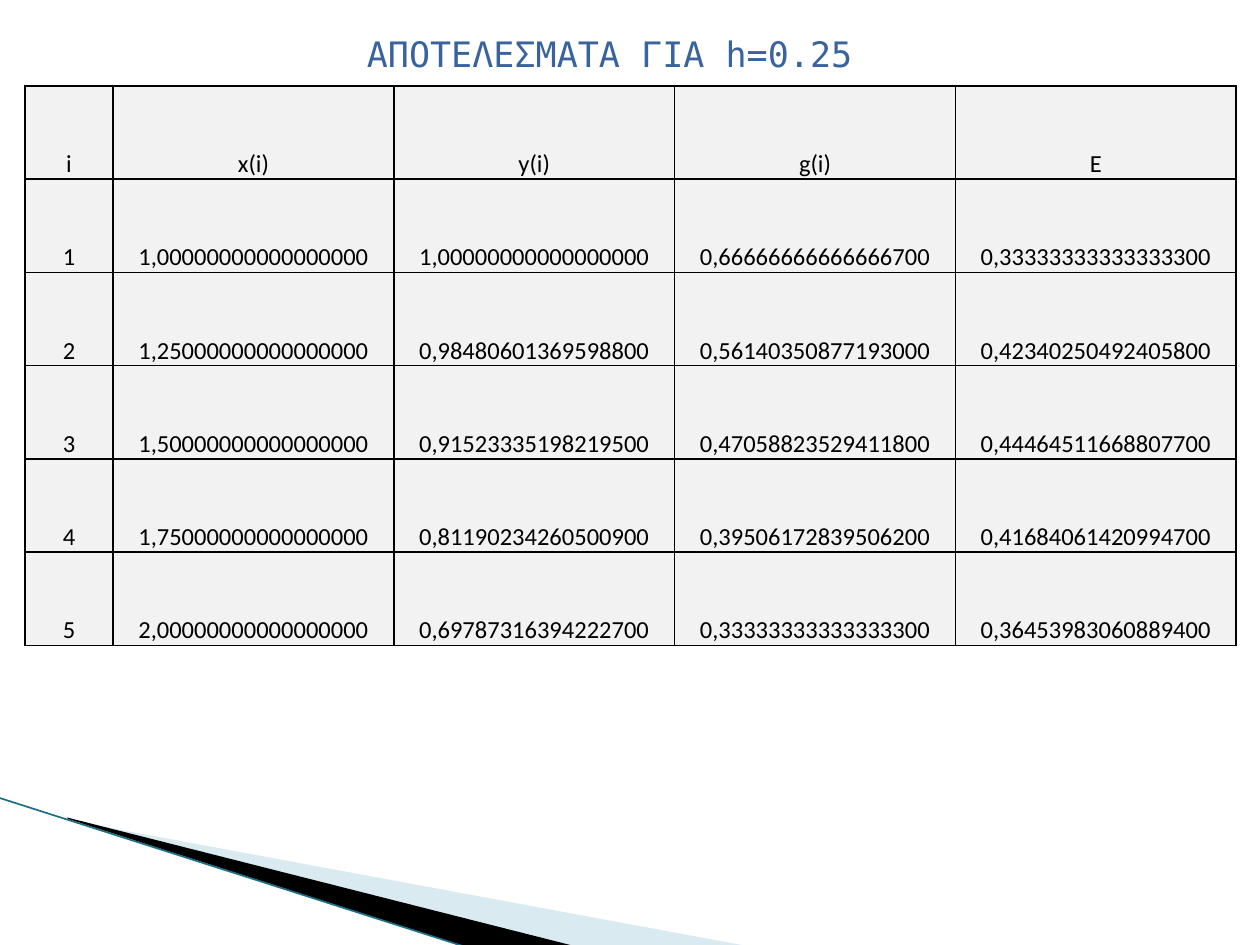
from lxml import etree
from pptx import Presentation
from pptx import util as u
from pptx.dml.color import RGBColor
from pptx.enum import shapes, text
from pptx.oxml import ns

HEADINGS = ["i", "x(i)", "y(i)", "g(i)", "E"]
RESULTS = [
    ["1", "1,00000000000000000", "1,00000000000000000", "0,66666666666666700", "0,33333333333333300"],
    ["2", "1,25000000000000000", "0,98480601369598800", "0,56140350877193000", "0,42340250492405800"],
    ["3", "1,50000000000000000", "0,91523335198219500", "0,47058823529411800", "0,44464511668807700"],
    ["4", "1,75000000000000000", "0,81190234260500900", "0,39506172839506200", "0,41684061420994700"],
    ["5", "2,00000000000000000", "0,69787316394222700", "0,33333333333333300", "0,36453983060889400"],
]


def colour(hex_code):
    return RGBColor.from_string(hex_code)


class SlideBuilder:
    """Holds the style and the slide being filled."""

    title_font, title_size, title_colour = "DejaVu Sans Mono", 20, "39639D"
    body_font, body_size, body_colour = "Calibri", 14, "000000"
    cell_fill, border_colour, border_width = "F2F2F2", "000000", 1

    def __init__(self, slide):
        self.slide = slide

    def wedge(self, corners, fill, opacity=None):
        """Draw a filled polygon; corners are in cm, opacity in percent."""
        start, *others = [(u.Cm(x), u.Cm(y)) for x, y in corners]
        builder = self.slide.shapes.build_freeform(*start)
        builder.add_line_segments(others, close=True)
        shape = builder.convert_to_shape()
        shape.shadow.inherit = False
        shape.line.fill.background()
        shape.fill.solid()
        shape.fill.fore_color.rgb = colour(fill)
        if opacity is not None:
            tint = shape._element.spPr.find(".//" + ns.qn("a:srgbClr"))
            etree.SubElement(tint, ns.qn("a:alpha"), val=str(opacity * 1000))

    def line(self, start, end, line_colour, width):
        connector = self.slide.shapes.add_connector(
            shapes.MSO_CONNECTOR.STRAIGHT, *map(u.Cm, start + end))
        connector.line.color.rgb = colour(line_colour)
        connector.line.width = u.Pt(width)
        etree.SubElement(connector._element.spPr, ns.qn("a:effectLst"))

    def centred_text(self, paragraph, wording, font, size, font_colour):
        paragraph.text = wording
        paragraph.alignment = text.PP_ALIGN.CENTER
        paragraph.font.name = font
        paragraph.font.size = u.Pt(size)
        paragraph.font.color.rgb = colour(font_colour)

    def title(self, wording, left, top, width, height):
        box = self.slide.shapes.add_textbox(*map(u.Cm, (left, top, width, height)))
        box.text_frame.word_wrap = True
        self.centred_text(box.text_frame.paragraphs[0], wording,
                          self.title_font, self.title_size, self.title_colour)

    def table(self, rows, left, top, column_widths, row_height):
        frame = self.slide.shapes.add_table(
            len(rows), len(column_widths), u.Cm(left), u.Cm(top),
            u.Cm(sum(column_widths)), u.Cm(row_height * len(rows)))
        for column, width in zip(frame.table.columns, column_widths):
            column.width = u.Cm(width)
        for row, wordings in zip(frame.table.rows, rows):
            row.height = u.Cm(row_height)
            for cell, wording in zip(row.cells, wordings):
                self.cell(cell, wording)

    def cell(self, cell, wording):
        cell.vertical_anchor = text.MSO_ANCHOR.BOTTOM
        cell.margin_left = cell.margin_right = u.Cm(0.18)
        cell.margin_top = cell.margin_bottom = 0
        cell.fill.solid()
        cell.fill.fore_color.rgb = colour(self.cell_fill)
        paragraph = cell.text_frame.paragraphs[0]
        self.centred_text(paragraph, wording,
                          self.body_font, self.body_size, self.body_colour)
        paragraph.line_spacing = 1.15
        self.borders(cell)

    def borders(self, cell):
        properties = cell._tc.get_or_add_tcPr()
        for position, side in enumerate(("lnL", "lnR", "lnT", "lnB")):
            edge = etree.Element(ns.qn("a:" + side), w=str(u.Pt(self.border_width)))
            fill = etree.SubElement(edge, ns.qn("a:solidFill"))
            etree.SubElement(fill, ns.qn("a:srgbClr"), val=self.border_colour)
            properties.insert(position, edge)


def main():
    deck = Presentation()
    deck.slide_width, deck.slide_height = u.Cm(25.4), u.Cm(19.05)
    builder = SlideBuilder(deck.slides.add_slide(deck.slide_layouts[6]))

    builder.wedge([(1.4, 16.54), (15.11, 19.08), (11.58, 19.08), (1.4, 16.51)],
                  "A0CBDC", opacity=40)
    builder.wedge([(1.35, 16.48), (11.61, 19.08), (9.45, 19.1), (1.37, 16.51)], "000000")
    builder.line((-0.03, 16.08), (9.42, 19.1), "1B6F84", 0.95)

    builder.title("ΑΠΟΤΕΛΕΣΜΑΤΑ ΓΙΑ h=0.25", 5.89, 0.53, 12.8, 1.12)
    builder.table([HEADINGS] + RESULTS, 0.5, 1.73, [1.78] + [5.66] * 4, 1.88)

    deck.save("out.pptx")


if __name__ == "__main__":
    main()
